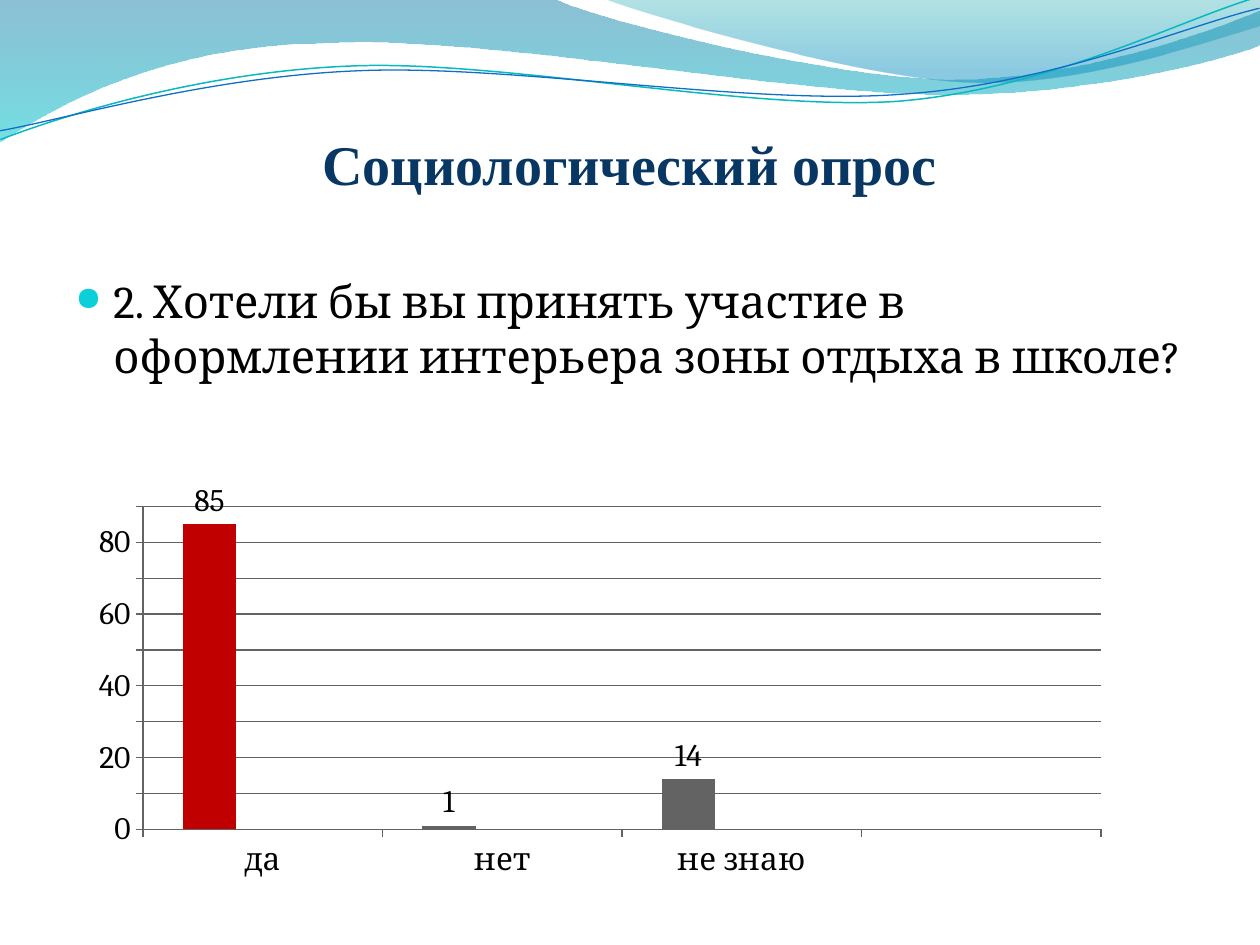
from lxml.etree import SubElement
from pptx import Presentation
from pptx.chart.data import CategoryChartData
from pptx.dml.color import RGBColor
from pptx.enum.chart import XL_CHART_TYPE as ChartType
from pptx.enum.chart import XL_LABEL_POSITION as LabelPosition
from pptx.enum.chart import XL_TICK_MARK as TickMark
from pptx.enum.text import MSO_ANCHOR as Anchor
from pptx.enum.text import MSO_AUTO_SIZE as AutoSize
from pptx.enum.text import PP_ALIGN as Align
from pptx.oxml import parse_xml
from pptx.oxml.ns import nsdecls, qn
from pptx.util import Emu, Pt

PX = 914400 / 126
BLACK = RGBColor(0x00, 0x00, 0x00)
NAVY = RGBColor(0x08, 0x37, 0x63)
RED = RGBColor(0xC0, 0x00, 0x00)
GRAY = RGBColor(0x63, 0x63, 0x63)
BLUE = RGBColor(0x0F, 0x6F, 0xC6)
SKY = RGBColor(0x00, 0x9D, 0xD9)
AQUA = RGBColor(0x0B, 0xD0, 0xD9)
TEAL = RGBColor(0x0A, 0xB8, 0xBF)
DEEP_BLUE = RGBColor(0x00, 0x74, 0xA1)
TURQUOISE = RGBColor(0x00, 0xC6, 0xCF)
SEA_GREEN = RGBColor(0x00, 0xA1, 0xA9)
OCEAN = RGBColor(0x00, 0x8B, 0xBF)


def px(length):
    return Emu(round(length * PX))


class SlideBuilder:
    title_font = "Times New Roman"
    body_font = "Cambria"

    def __init__(self, slide):
        self.slide = slide
        self.shapes = slide.shapes

    def outline(self, shapes, start, segments, close):
        """Segments are line ends (x, y) or curves (x1, y1, x2, y2, x, y)."""
        points = [segment[i:i + 2] for segment in segments for i in range(0, len(segment), 2)]
        builder = shapes.build_freeform(*start, scale=PX)
        builder.add_line_segments(points, close=close)
        shape = builder.convert_to_shape()
        shape.shadow.inherit = False
        # Fold the three points of each curve into one Bezier segment
        lines = shape.element.spPr.iter(qn("a:lnTo"))
        lines = iter(list(lines))
        for segment in segments:
            first = next(lines)
            if len(segment) == 6:
                first.tag = qn("a:cubicBezTo")
                for line in (next(lines), next(lines)):
                    first.append(line[0])
                    line.getparent().remove(line)
        return shape

    def wave(self, start, segments, stops):
        wave = self.outline(self.shapes, start, segments, close=True)
        wave.line.fill.background()
        wave.fill.gradient()
        wave.fill.gradient_angle = 270
        for stop, (position, color, _) in zip(wave.fill.gradient_stops, stops):
            stop.position = position
            stop.color.rgb = color
        colors = wave.element.spPr.iter(qn("a:srgbClr"))
        for color_node, (_, _, opacity) in zip(colors, stops):
            SubElement(color_node, qn("a:alpha")).set("val", str(opacity * 1000))

    def ripples(self, *ripples):
        group = self.shapes.add_group_shape()
        for start, segments, color, width in ripples:
            ripple = self.outline(group.shapes, start, segments, close=False)
            ripple.rotation = 357.3
            ripple.fill.background()
            ripple.line.color.rgb = color
            ripple.line.width = Pt(width)

    def add_run(self, paragraph, text, font, size, color, bold=False):
        run = paragraph.add_run()
        run.text = text
        run.font.name = font
        run.font.size = Pt(size)
        run.font.color.rgb = color
        run.font.bold = bold

    def title(self, text, left, top, width, height):
        title = self.shapes.title
        title.element.getparent().append(title.element)  # in front of the waves
        title.left, title.top, title.width, title.height = map(px, (left, top, width, height))
        frame = title.text_frame
        frame.auto_size = AutoSize.NONE
        frame.vertical_anchor = Anchor.BOTTOM
        frame.margin_left = frame.margin_right = frame.margin_bottom = 0
        paragraph = frame.paragraphs[0]
        paragraph.alignment = Align.CENTER
        self.add_run(paragraph, text, self.title_font, 32, NAVY, bold=True)

    def bullet(self, text, left, top, width, height):
        frame = self.shapes.add_textbox(*map(px, (left, top, width, height))).text_frame
        frame.word_wrap = True
        paragraph = frame.paragraphs[0]
        paragraph.space_before = Pt(5)
        self.add_run(paragraph, text, self.body_font, 26, BLACK)
        props = paragraph._p.get_or_add_pPr()
        props.set("marL", str(px(38)))
        props.set("indent", str(px(-38)))
        color = SubElement(props, qn("a:buClr"))
        SubElement(color, qn("a:srgbClr")).set("val", str(AQUA))
        SubElement(props, qn("a:buSzPct")).set("val", "73000")
        SubElement(props, qn("a:buChar")).set("char", "●")

    def column_chart(self, categories, series, frame, plot_frame):
        data = CategoryChartData()
        data.categories = categories
        for name, values, _ in series:
            data.add_series(name, values)
        chart = self.shapes.add_chart(ChartType.COLUMN_CLUSTERED, *map(px, frame), data).chart
        chart.has_legend = chart.has_title = False
        chart.font.name = self.body_font
        chart.font.size = Pt(18)
        chart.font.color.rgb = BLACK
        plot = chart.plots[0]
        plot.gap_width, plot.overlap = 150, 0
        plot.vary_by_categories = False
        for bars, (_, _, color) in zip(plot.series, series):
            bars.format.fill.solid()
            bars.format.fill.fore_color.rgb = color
        for axis in (chart.category_axis, chart.value_axis):
            axis.major_tick_mark = TickMark.OUTSIDE
            axis.format.line.color.rgb = GRAY
            axis.format.line.width = Pt(0.75)
        scale = chart.value_axis
        scale.minimum_scale, scale.maximum_scale, scale.major_unit = 0, 90, 10
        scale.has_major_gridlines = True
        scale.major_gridlines.format.line.color.rgb = GRAY
        scale.major_gridlines.format.line.width = Pt(0.75)
        self.place_plot(plot, frame, plot_frame)
        # A category without a name keeps its place but has no label point
        for label in list(plot._element.iter(qn("c:pt"))):
            if not label[0].text:
                label.getparent().remove(label)
        return chart

    def place_plot(self, plot, frame, plot_frame):
        left, top, width, height = frame
        x, y, w, h = plot_frame
        fractions = {"x": (x - left) / width, "y": (y - top) / height,
                     "w": w / width, "h": h / height}
        area = plot._element.getparent()
        for old in area.findall(qn("c:layout")):
            area.remove(old)
        sizes = "".join(f'<c:{key} val="{value:.4f}"/>' for key, value in fractions.items())
        area.insert(0, parse_xml(
            f'<c:layout {nsdecls("c")}><c:manualLayout><c:layoutTarget val="inner"/>'
            f'<c:xMode val="edge"/><c:yMode val="edge"/>{sizes}'
            '</c:manualLayout></c:layout>'))


def main():
    deck = Presentation()
    deck.slide_width, deck.slide_height = px(1260), px(945)
    page = SlideBuilder(deck.slides.add_slide(deck.slide_layouts[5]))

    # Waves along the top edge
    page.wave((0, 0),
              [(554, -1), (600, 21, 837, 79, 955, 79), (1075, 79, 1207, 33, 1260, 11),
               (1261, 45), (1239, 55, 1096, 96, 940, 94), (784, 94, 481, 35, 324, 43),
               (163, 45, 58, 105, -1, 142)],
              [(0, DEEP_BLUE, 45), (1, TURQUOISE, 55)])
    page.wave((604, -1),
              [(641, 14, 859, 78, 969, 82), (1079, 87, 1211, 40, 1260, 26), (1260, 0)],
              [(0, SEA_GREEN, 30), (0.8, OCEAN, 45)])
    page.ripples(
        ((-2, 110), [(58, 90, 199, 52, 350, 53), (499, 53, 745, 117, 896, 114),
                     (1049, 109, 1184, 45, 1260, 27)], TEAL, 0.85),
        ((-2, 101), [(57, 94, 207, 57, 357, 58), (509, 58, 750, 112, 902, 107),
                     (1052, 104, 1187, 52, 1262, 38)], BLUE, 0.75))

    # Heading and survey question
    page.title("Социологический опрос", 63, 97, 1134, 100)
    page.bullet("2. Хотели бы вы принять участие в оформлении интерьера зоны отдыха в школе?",
                63, 267, 1134, 605)

    # Survey answers
    no_answers = (None,) * 4
    answers = page.column_chart(
        ["да", "нет", "не знаю", ""],
        [("Series 1", (85, 1, 14, None), GRAY),
         ("Series 2", no_answers, SKY),
         ("Series 3", no_answers, AQUA)],
        (78, 483, 1043, 402), (143, 504, 958, 325))
    votes = answers.plots[0].series[0]
    yes_bar = votes.points[0].format.fill
    yes_bar.solid()
    yes_bar.fore_color.rgb = RED
    votes.data_labels.show_value = True
    votes.data_labels.position = LabelPosition.OUTSIDE_END

    deck.save("out.pptx")


if __name__ == "__main__":
    main()
